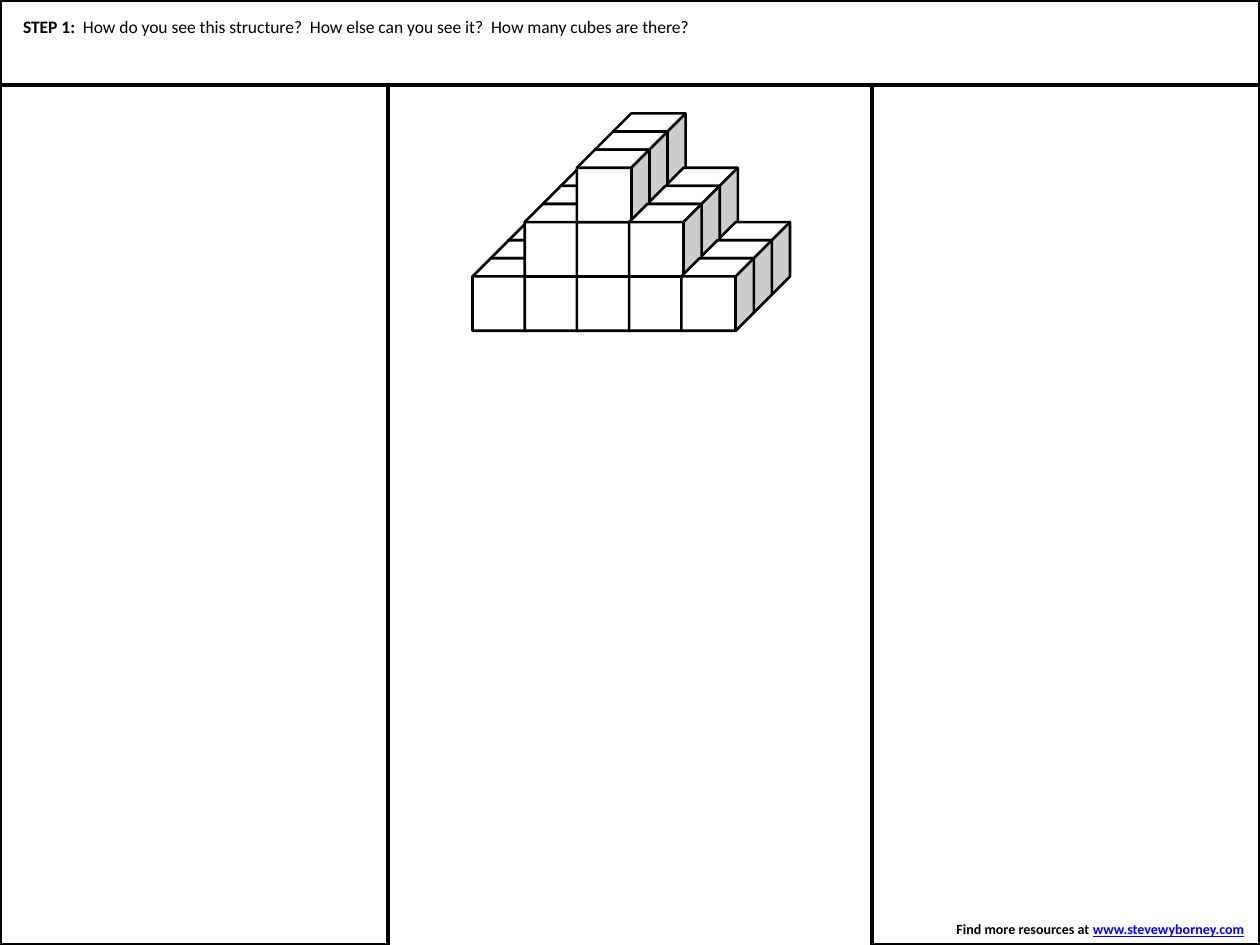
import pptx
import pptx.util
import pptx.dml.color
import pptx.enum.shapes
import pptx.enum.text
from dataclasses import dataclass

SHAPE = pptx.enum.shapes.MSO_SHAPE
ALIGN = pptx.enum.text.PP_ALIGN
WIDE, HIGH = 10, 7.5


@dataclass(frozen=True)
class Theme:
    font: str = "Calibri"
    ink: str = "000000"
    paper: str = "FFFFFF"
    link: str = "0000FF"
    head: float = 10
    foot: float = 8
    frame: float = 2
    edge: float = 1.5


THEME = Theme()


def tint(code):
    return pptx.dml.color.RGBColor.from_string(code)


def inch(box):
    return [pptx.util.Inches(v) for v in box]


def part(shapes, kind, box, fill=None, line=None):
    """Place a preset shape with an optional fill and outline width."""
    shape = shapes.add_shape(kind, *inch(box))
    shape.shadow.inherit = False
    if fill:
        shape.fill.solid()
        shape.fill.fore_color.rgb = tint(fill)
    else:
        shape.fill.background()
    if line:
        shape.line.color.rgb = tint(THEME.ink)
        shape.line.width = pptx.util.Pt(line)
    else:
        shape.line.fill.background()
    return shape


def write(para, text, size, bold=False, color=THEME.ink, under=False):
    run = para.add_run()
    run.text = text
    font = run.font
    font.name, font.size = THEME.font, pptx.util.Pt(size)
    font.bold, font.underline = bold, under
    font.color.rgb = tint(color)


def panels(shapes, box, share):
    """Outline the two side columns, leaving the middle open."""
    x, y, w, h = box
    side = w * share
    for left in (x, x + w - side):
        part(shapes, SHAPE.RECTANGLE, (left, y, side, h), line=THEME.frame)


def header(shapes, box):
    """Title band with the question on its upper half."""
    x, y, w, h = box
    part(shapes, SHAPE.RECTANGLE, box, THEME.paper, THEME.frame)
    pad = h / 8
    label = part(shapes, SHAPE.RECTANGLE,
                 (x + pad, y + pad, w - 2 * pad, h * 3 / 8), THEME.paper)
    frame = label.text_frame
    frame.word_wrap = True
    frame.vertical_anchor = pptx.enum.text.MSO_ANCHOR.MIDDLE
    para = frame.paragraphs[0]
    para.alignment = ALIGN.LEFT
    write(para, "STEP 1:  ", THEME.head, bold=True)
    write(para, "How do you see this structure?  How else can you see it?  "
                "How many cubes are there?", THEME.head)


def footer(shapes, box):
    """Right-aligned source line."""
    frame = shapes.add_textbox(*inch(box)).text_frame
    frame.word_wrap = False
    frame.auto_size = pptx.enum.text.MSO_AUTO_SIZE.SHAPE_TO_FIT_TEXT
    para = frame.paragraphs[0]
    para.alignment = ALIGN.RIGHT
    write(para, "Find more resources at ", THEME.foot, bold=True)
    write(para, "www.stevewyborney.com", THEME.foot, True, THEME.link, True)
    write(para, " ", THEME.foot, bold=True)


def stack(shapes, box, tall=3, deep=3):
    """Stepped pile of cubes, drawn back to front, left to right, bottom up."""
    x, y, w, h = box
    cols = 2 * tall - 1
    side = h / 3
    step = side / 4
    pitch = (w - side - (deep - 1) * step) / (cols - 1)
    rise = (h - side - (deep - 1) * step) / (tall - 1)
    base = y + h - side
    group = shapes.add_group_shape()
    for back in reversed(range(deep)):
        for col in range(cols):
            for level in range(min(col, cols - 1 - col) + 1):
                spot = (x + col * pitch + back * step,
                        base - level * rise - back * step, side, side)
                part(group.shapes, SHAPE.CUBE, spot, THEME.paper, THEME.edge)


def main():
    deck = pptx.Presentation()
    deck.slide_width, deck.slide_height = inch((WIDE, HIGH))
    shapes = deck.slides.add_slide(deck.slide_layouts[6]).shapes
    panels(shapes, (0, 0, WIDE, HIGH), 0.308)
    header(shapes, (0, 0, WIDE, HIGH * 0.09))
    footer(shapes, (WIDE * 0.746, HIGH * 0.968, WIDE * 0.254, HIGH * 0.032))
    stack(shapes, (WIDE * 0.375, HIGH * 0.12, WIDE * 0.252, HIGH * 0.23))
    deck.save("out.pptx")


if __name__ == "__main__":
    main()
